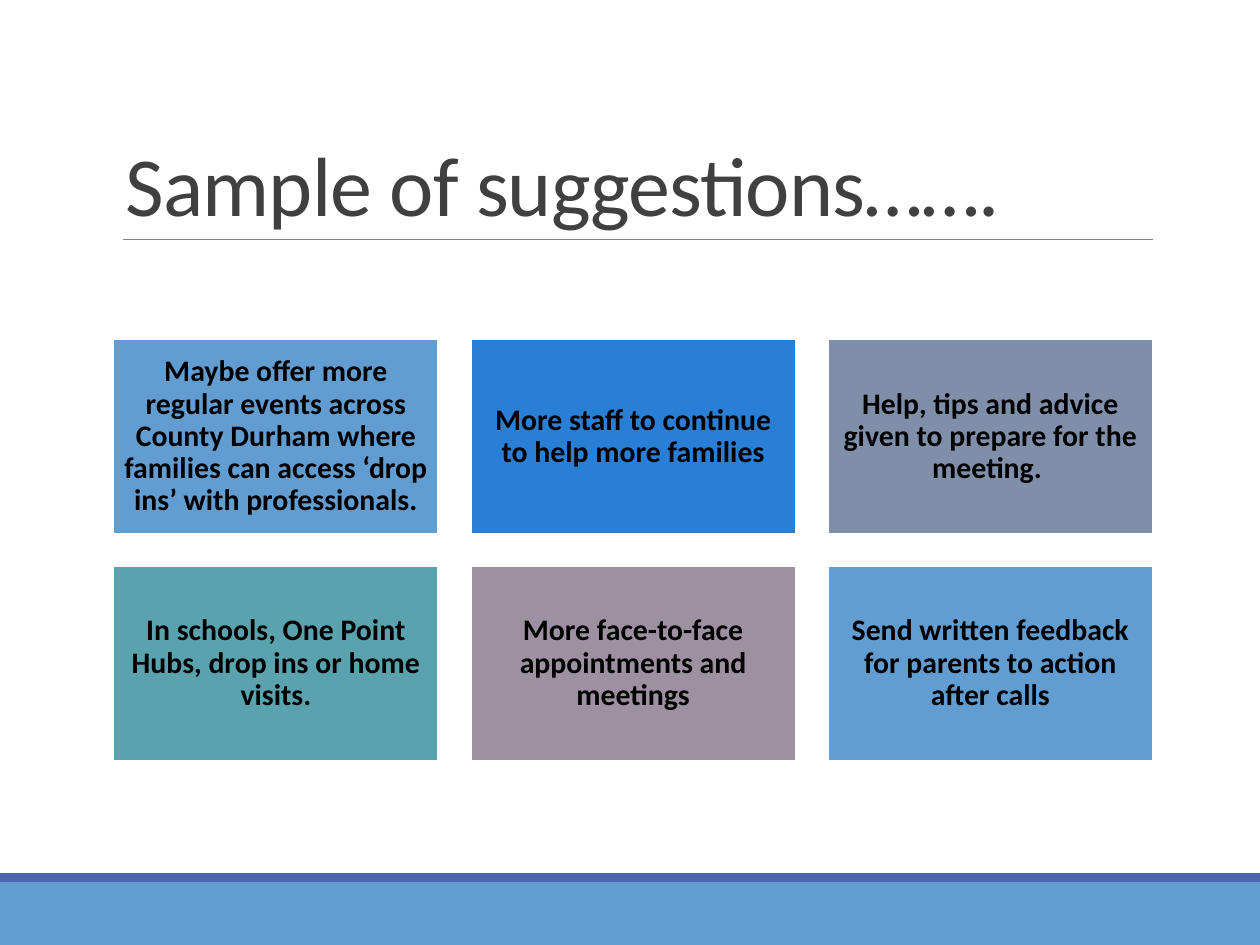
from dataclasses import dataclass

from lxml.etree import SubElement
from pptx import Presentation
from pptx.dml.color import RGBColor
from pptx.enum.shapes import MSO_CONNECTOR, MSO_SHAPE
from pptx.enum.text import MSO_ANCHOR, PP_ALIGN
from pptx.oxml.ns import qn
from pptx.util import Inches, Pt


@dataclass(frozen=True)
class Theme:
    font: str = "Calibri"
    title_size: float = 48
    card_size: float = 17
    title: str = "404040"
    text: str = "000000"
    rule: str = "808080"
    white: str = "FFFFFF"
    sky: str = "629DD1"
    navy: str = "4A66AC"
    blue: str = "297FD5"
    slate: str = "7F8FA9"
    teal: str = "5AA2AE"
    mauve: str = "9D90A0"


THEME = Theme()

SUGGESTIONS = [
    ("Maybe offer more regular events across County Durham where families "
     "can access ‘drop ins’ with professionals.", THEME.sky),
    ("More staff to continue to help more families", THEME.blue),
    ("Help, tips and advice given to prepare for the meeting. ", THEME.slate),
    ("In schools, One Point Hubs, drop ins or home visits.", THEME.teal),
    ("More face-to-face appointments and meetings", THEME.mauve),
    ("Send written feedback for parents to action after calls", THEME.sky),
]


def rgb(value):
    return RGBColor.from_string(value)


def write_text(sp, text, *, size, color, bold=False, align=PP_ALIGN.LEFT,
               anchor=MSO_ANCHOR.MIDDLE, line_spacing=1.0, inset=None, tracking=None):
    tf = sp.text_frame
    tf.word_wrap = True
    tf.vertical_anchor = anchor
    if inset is not None:
        tf.margin_left = tf.margin_right = Inches(inset)
        tf.margin_top = tf.margin_bottom = Inches(inset)
    p = tf.paragraphs[0]
    p.alignment = align
    p.line_spacing = line_spacing
    r = p.add_run()
    r.text = text
    r.font.name = THEME.font
    r.font.size = Pt(size)
    r.font.bold = bold
    r.font.color.rgb = rgb(color)
    if tracking is not None:
        r.font._element.set("spc", str(int(tracking * 100)))


def add_rect(s, left, top, width, height, fill, line=None):
    sp = s.shapes.add_shape(MSO_SHAPE.RECTANGLE, Inches(left), Inches(top),
                            Inches(width), Inches(height))
    sp.shadow.inherit = False
    sp.fill.solid()
    sp.fill.fore_color.rgb = rgb(fill)
    if line:
        sp.line.color.rgb = rgb(line)
        sp.line.width = Pt(1.25)
    else:
        sp.line.fill.background()
    return sp


def add_footer(s, left, top, width, height, stripe=0.07):
    add_rect(s, left, top + stripe, width, height - stripe, THEME.sky)
    add_rect(s, left, top, width, stripe, THEME.navy)


def add_title(s, left, top, width, height, text):
    bottom = Inches(top + height)
    rule = s.shapes.add_connector(MSO_CONNECTOR.STRAIGHT, Inches(left + 0.08), bottom,
                                  Inches(left + width), bottom)
    rule.line.color.rgb = rgb(THEME.rule)
    rule.line.width = Pt(0.5)
    SubElement(rule._element.spPr, qn("a:effectLst"))
    sp = s.shapes.add_textbox(Inches(left), Inches(top), Inches(width), Inches(height))
    write_text(sp, text, size=THEME.title_size, color=THEME.title,
               anchor=MSO_ANCHOR.BOTTOM, line_spacing=0.85, tracking=-0.5)


def add_cards(s, left, top, width, height, cards, cols=3, card_w=2.58, card_h=1.55):
    rows = len(cards) // cols
    step_x = (width - card_w) / (cols - 1)
    step_y = (height - card_h) / (rows - 1)
    for i, (text, fill) in enumerate(cards):
        row, col = divmod(i, cols)
        sp = add_rect(s, left + col * step_x, top + row * step_y, card_w, card_h,
                      fill, THEME.white)
        write_text(sp, text, size=THEME.card_size, color=THEME.text, bold=True,
                   align=PP_ALIGN.CENTER, line_spacing=0.9, inset=0.07)


def main():
    prs = Presentation()
    prs.slide_width, prs.slide_height = Inches(10), Inches(7.5)
    s = prs.slides.add_slide(prs.slide_layouts[6])
    add_footer(s, 0, 6.93, 10, 0.57)
    add_title(s, 0.9, 0.31, 8.25, 1.59, "Sample of suggestions…….")
    add_cards(s, 0.9, 2.69, 8.25, 3.35, SUGGESTIONS)
    prs.save("out.pptx")


if __name__ == "__main__":
    main()
